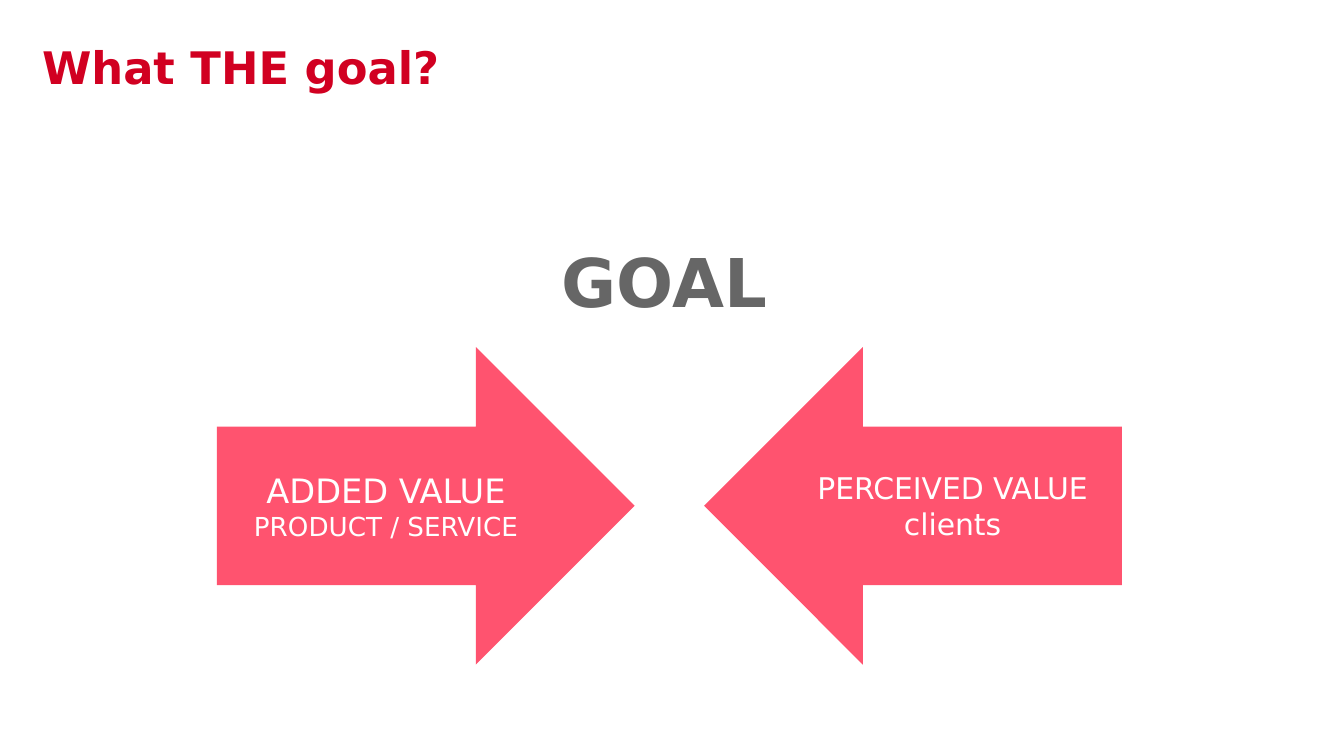
import pptx
import pptx.util
import pptx.dml.color
import pptx.enum.shapes
import pptx.enum.text

Pt = pptx.util.Pt
ARROW = pptx.enum.shapes.MSO_SHAPE
ANCHOR = pptx.enum.text.MSO_ANCHOR
ALIGN = pptx.enum.text.PP_ALIGN


def rgb(color):
    return pptx.dml.color.RGBColor.from_string(color)


class SlideBuilder:
    FONT = "DejaVu Sans"
    RED = "D10021"
    GREY = "666666"
    PINK = "FF536F"
    WHITE = "FFFFFF"

    def __init__(self, prs):
        self.slide = prs.slides.add_slide(prs.slide_layouts[5])

    def add_lines(self, tf, lines, color, bold=False, align=ALIGN.CENTER,
                  anchor=ANCHOR.TOP):
        """Fill a text frame with (text, size) lines, one paragraph each."""
        tf.word_wrap = True
        tf.auto_size = pptx.enum.text.MSO_AUTO_SIZE.NONE
        tf.vertical_anchor = anchor
        for i, (text, size) in enumerate(lines):
            p = tf.add_paragraph() if i else tf.paragraphs[0]
            p.alignment = align
            p.space_before = Pt(0)
            r = p.add_run()
            r.text = text
            r.font.name = self.FONT
            r.font.size = Pt(size)
            r.font.bold = bold
            r.font.color.rgb = rgb(color)

    def no_margins(self, tf):
        tf.margin_left = tf.margin_right = Pt(0)
        tf.margin_top = tf.margin_bottom = Pt(0)

    def title(self, text, left, top, width, height):
        sp = self.slide.shapes.title
        sp.left, sp.top, sp.width, sp.height = map(Pt, (left, top, width, height))
        tf = sp.text_frame
        self.no_margins(tf)
        self.add_lines(tf, [(text, 24)], self.RED, True, ALIGN.LEFT)
        tf.paragraphs[0].line_spacing = Pt(24.3)

    def heading(self, text, left, top, width, height):
        sp = self.slide.shapes.add_textbox(*map(Pt, (left, top, width, height)))
        self.no_margins(sp.text_frame)
        self.add_lines(sp.text_frame, [(text, 36)], self.GREY, True)

    def arrow(self, kind, lines, left, top, width, height):
        sp = self.slide.shapes.add_shape(kind, *map(Pt, (left, top, width, height)))
        sp.shadow.inherit = False
        sp.fill.solid()
        sp.fill.fore_color.rgb = rgb(self.PINK)
        sp.line.fill.background()
        self.add_lines(sp.text_frame, lines, self.WHITE, anchor=ANCHOR.MIDDLE)


def main():
    prs = pptx.Presentation()
    prs.slide_width, prs.slide_height = Pt(720), Pt(405)
    s = SlideBuilder(prs)
    s.title("What THE goal?", 22.5, 26, 334, 52.5)
    s.heading("GOAL", 39.5, 129, 633, 245.5)

    left, top, width, height, gap = 116.2, 186, 223.8, 170, 37.2
    s.arrow(ARROW.RIGHT_ARROW, [("ADDED VALUE", 18), ("PRODUCT / SERVICE", 14)],
            left, top, width, height)
    s.arrow(ARROW.LEFT_ARROW, [("PERCEIVED VALUE", 16), ("clients", 16)],
            left + width + gap, top, width, height)
    prs.save("out.pptx")


if __name__ == "__main__":
    main()
